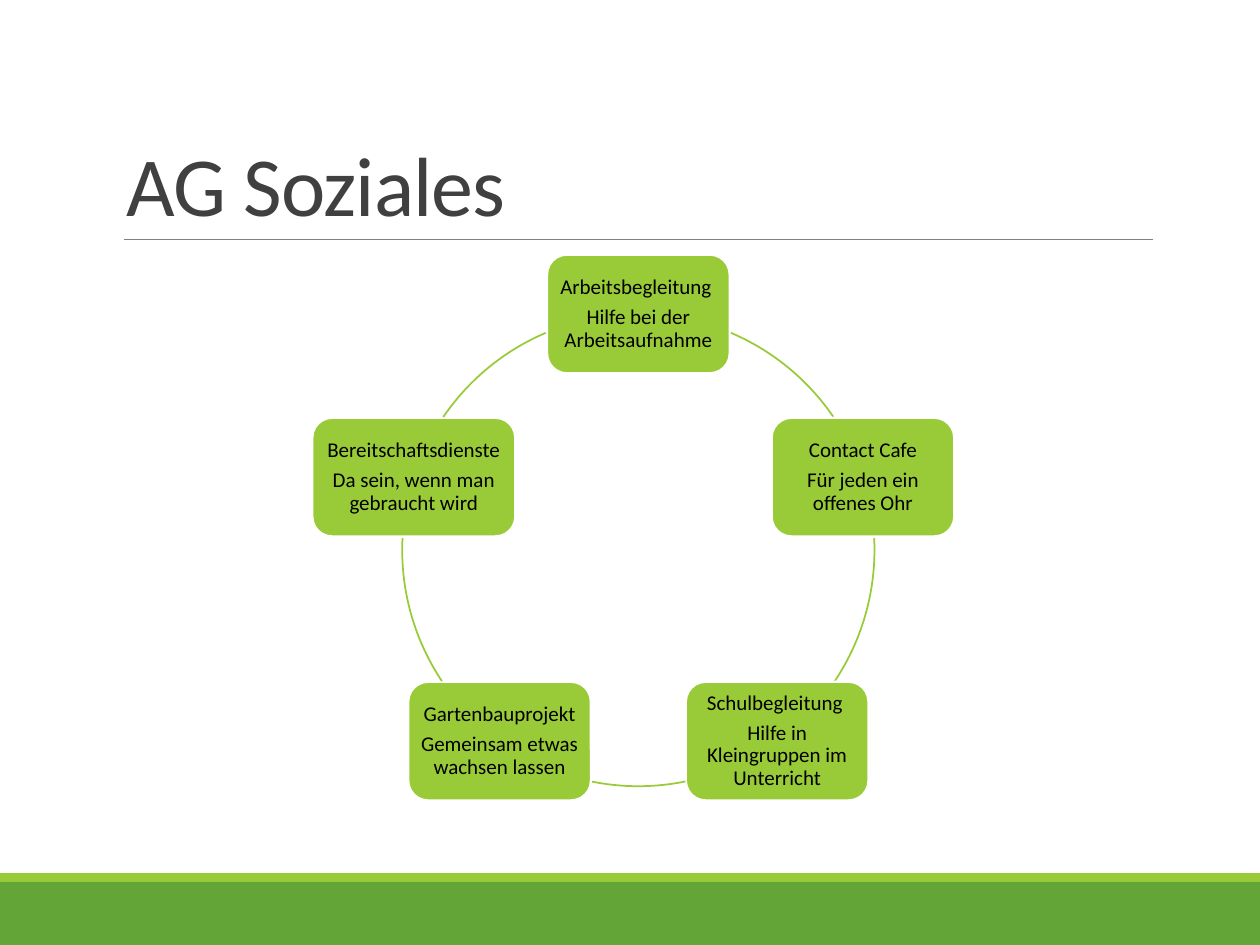
from dataclasses import dataclass
from math import cos, radians, sin

from lxml import etree
from pptx import Presentation
from pptx.dml.color import RGBColor
from pptx.enum.shapes import MSO_CONNECTOR, MSO_SHAPE
from pptx.enum.text import MSO_ANCHOR, MSO_AUTO_SIZE, PP_ALIGN
from pptx.oxml.ns import qn
from pptx.util import Cm, Pt

RECT, ROUNDED, ARC = MSO_SHAPE.RECTANGLE, MSO_SHAPE.ROUNDED_RECTANGLE, MSO_SHAPE.ARC
STRAIGHT = MSO_CONNECTOR.STRAIGHT
LEFT, CENTER = PP_ALIGN.LEFT, PP_ALIGN.CENTER
MIDDLE, BOTTOM = MSO_ANCHOR.MIDDLE, MSO_ANCHOR.BOTTOM
NO_FIT = MSO_AUTO_SIZE.NONE


@dataclass(frozen=True)
class Theme:
    font: str = "Calibri"
    dark_green: str = "63A537"
    green: str = "99CB38"
    white: str = "FFFFFF"
    rule: str = "808080"
    title: str = "404040"
    text: str = "000000"
    title_size: float = 48
    card_size: float = 12


def rgb(value):
    return RGBColor.from_string(value)


def write(p, text, *, font, size, color, align=LEFT, line_spacing=1.0, after=0, tracking=None):
    """Fill a paragraph with one run; size, after and tracking are in points."""
    p.alignment = align
    p.line_spacing = line_spacing
    p.space_before = Pt(0)
    p.space_after = Pt(after)
    r = p.add_run()
    r.text = text
    r.font.name = font
    r.font.size = Pt(size)
    r.font.color.rgb = rgb(color)
    if tracking is not None:
        r.font._element.set("spc", str(round(tracking * 100)))


class SlideBuilder:
    """Adds styled elements to one slide; all lengths are in centimetres."""

    def __init__(self, slide, theme):
        self.slide = slide
        self.theme = theme

    def shape(self, kind, x, y, w, h, fill=None, line=None, line_width=1.0):
        s = self.slide.shapes.add_shape(kind, Cm(x), Cm(y), Cm(w), Cm(h))
        s.shadow.inherit = False
        if fill:
            s.fill.solid()
            s.fill.fore_color.rgb = rgb(fill)
        else:
            s.fill.background()
        if line:
            s.line.color.rgb = rgb(line)
            s.line.width = Pt(line_width)
        else:
            s.line.fill.background()
        return s

    def title(self, text, x, y, w, h):
        s = self.slide.shapes.title
        s.left, s.top, s.width, s.height = Cm(x), Cm(y), Cm(w), Cm(h)
        tf = s.text_frame
        tf.auto_size = NO_FIT
        tf.vertical_anchor = BOTTOM
        t = self.theme
        write(tf.paragraphs[0], text, font=t.font, size=t.title_size, color=t.title,
              line_spacing=0.85, tracking=-0.5)

    def rule(self, x1, x2, y):
        c = self.slide.shapes.add_connector(STRAIGHT, Cm(x1), Cm(y), Cm(x2), Cm(y))
        c.line.color.rgb = rgb(self.theme.rule)
        c.line.width = Pt(0.5)
        etree.SubElement(c._element.spPr, qn("a:effectLst"))

    def card(self, cx, cy, w, h, heading, detail):
        t = self.theme
        s = self.shape(ROUNDED, cx - w / 2, cy - h / 2, w, h, t.green, t.white, 1.25)
        tf = s.text_frame
        tf.word_wrap = True
        tf.vertical_anchor = MIDDLE
        tf.margin_left = tf.margin_right = tf.margin_top = tf.margin_bottom = Cm(0.12)
        look = dict(font=t.font, size=t.card_size, color=t.text, align=CENTER, line_spacing=0.9)
        write(tf.paragraphs[0], heading, after=0.35 * t.card_size, **look)
        write(tf.add_paragraph(), detail, **look)

    def arc(self, cx, cy, radius, start, end):
        """Draw a clockwise arc; angles are in degrees from the right."""
        s = self.shape(ARC, cx - radius, cy - radius, 2 * radius, 2 * radius,
                       line=self.theme.green)
        for i, angle in enumerate((start, end)):
            s.adjustments[i] = angle * 60000 / 100000


def main():
    theme = Theme()
    prs = Presentation()
    prs.slide_width, prs.slide_height = Cm(25.4), Cm(19.05)
    b = SlideBuilder(prs.slides.add_slide(prs.slide_layouts[5]), theme)

    b.shape(RECT, 0, 17.78, 25.4, 1.27, theme.dark_green)
    b.shape(RECT, 0, 17.6, 25.4, 0.18, theme.green)
    b.rule(2.49, 23.24, 4.83)
    b.title("AG Soziales", 2.29, 0.79, 20.95, 4.04)

    cx, cy, radius = 12.87, 11.09, 4.76
    card_w, wide_card_w, card_h = 3.68, 4.09, 2.39
    # Each card is followed by the arc that leads to the next one.
    cycle = [
        ("Arbeitsbegleitung ", "Hilfe bei der Arbeitsaufnahme", card_w, (293.1, 325.7)),
        ("Contact Cafe", "Für jeden ein offenes Ohr", card_w, (357.1, 33.7)),
        ("Schulbegleitung ", "Hilfe in Kleingruppen im Unterricht", card_w, (78.5, 101.5)),
        ("Gartenbauprojekt", "Gemeinsam etwas wachsen lassen", card_w, (146.3, 182.9)),
        ("Bereitschaftsdienste", "Da sein, wenn man gebraucht wird", wide_card_w,
         (214.3, 246.9)),
    ]
    for i, (heading, detail, width, angles) in enumerate(cycle):
        a = radians(360 / len(cycle) * i - 90)
        b.card(cx + radius * cos(a), cy + radius * sin(a), width, card_h, heading, detail)
        b.arc(cx, cy, radius, *angles)

    prs.save("out.pptx")


if __name__ == "__main__":
    main()
